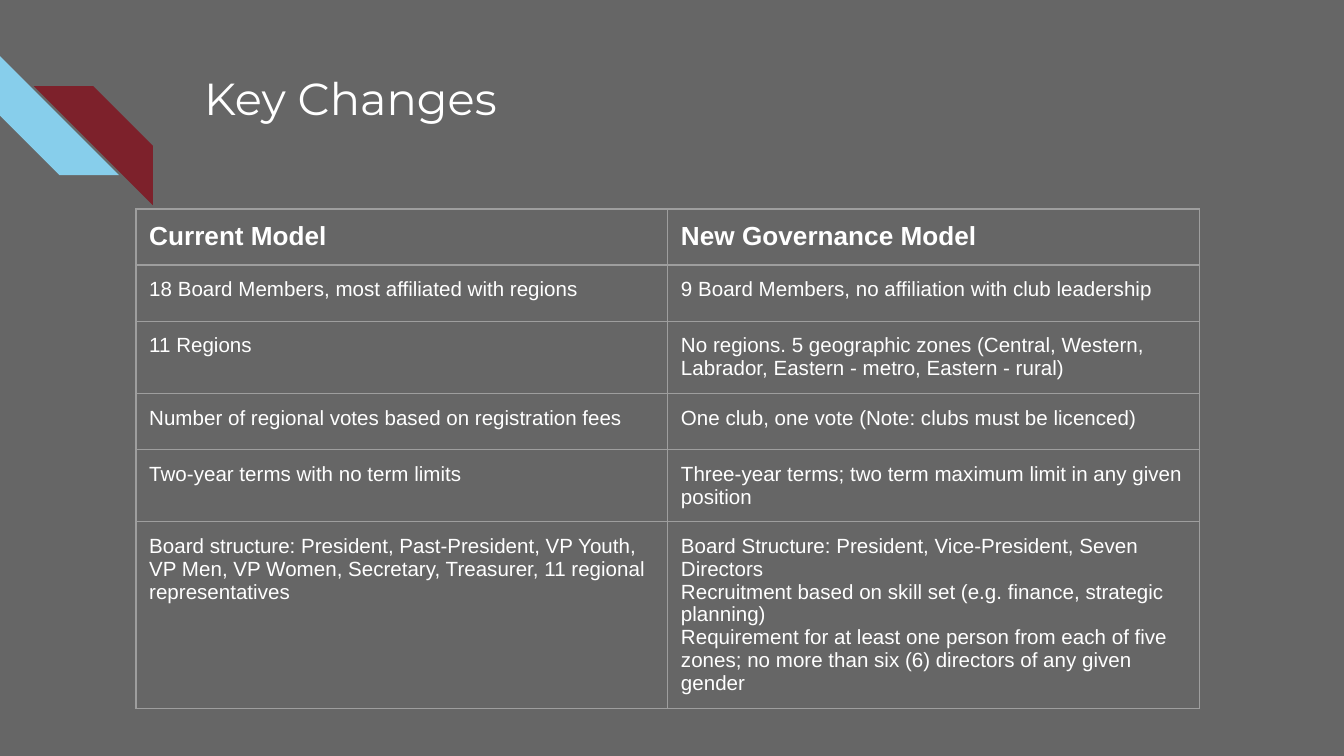
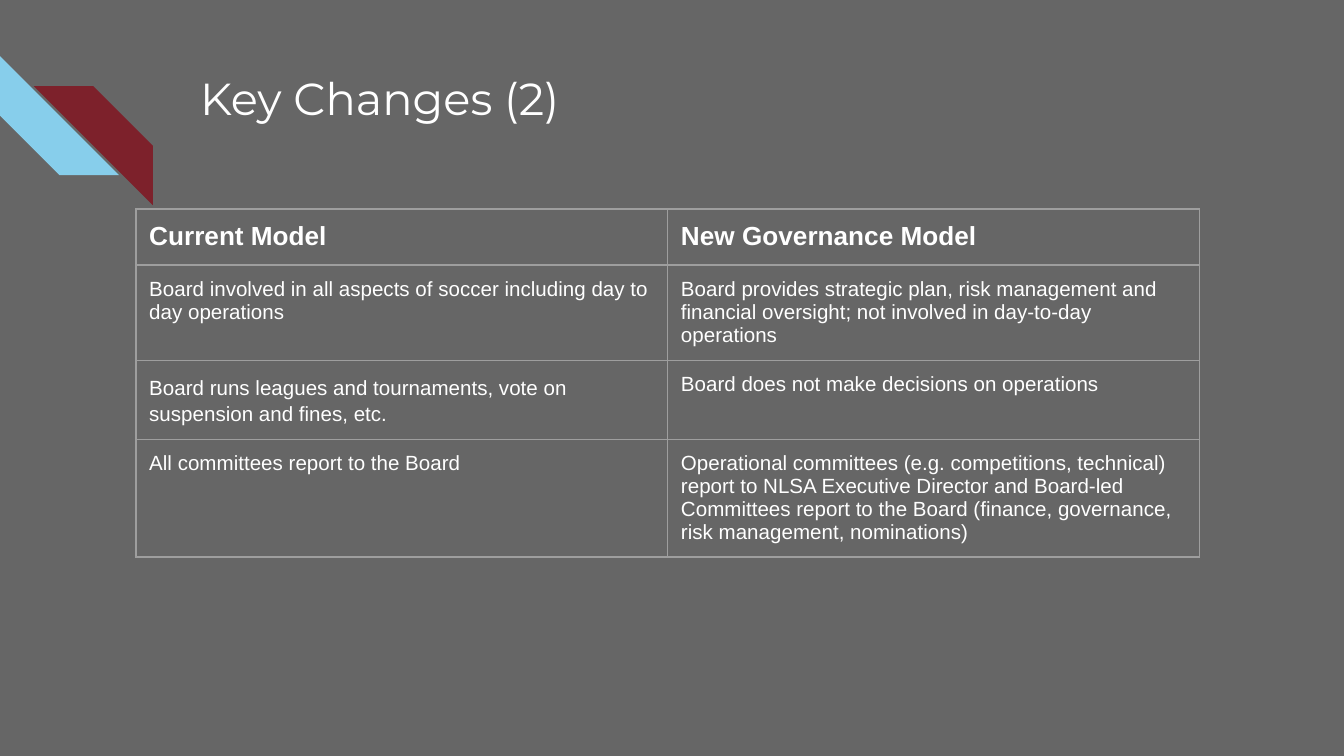
"""Build two slides that compare the current and the new governance model."""
from dataclasses import dataclass

from lxml import etree
from pptx import Presentation
from pptx import util as u
from pptx.dml.color import RGBColor
from pptx.enum import shapes, text
from pptx.oxml import ns

GREY = RGBColor(0x66, 0x66, 0x66)
WHITE = RGBColor(0xFF, 0xFF, 0xFF)
SKY = RGBColor(0x87, 0xCE, 0xEB)
WINE = RGBColor(0x7D, 0x21, 0x2B)
RULE = RGBColor(0x9E, 0x9E, 0x9E)
INSET = u.Cm(0.25)
SIDE = u.Cm(2.25)
COL = u.Cm(10.05)


@dataclass
class Stripe:
    left: float
    top: float
    fill: RGBColor
    turn: int = 0
    flip: bool = False


@dataclass
class Row:
    high: float
    now: str
    new: str
    loose: bool = False


@dataclass
class Page:
    title: str
    left: float
    rows: list[Row]


STRIPES = [
    Stripe(0, 1.06, SKY, turn=270),
    Stripe(0.64, 1.63, WINE, flip=True),
]
HEAD = Row(1.06, "Current Model", "New Governance Model")
PAGES = [
    Page("Key Changes", 3.61, [
        HEAD,
        Row(1.06, "18 Board Members, most affiliated with regions",
            "9 Board Members, no affiliation with club leadership"),
        Row(0.94, "11 Regions",
            "No regions. 5 geographic zones (Central, Western, Labrador, "
            "Eastern - metro, Eastern - rural)"),
        Row(1.06, "Number of regional votes based on registration fees",
            "One club, one vote (Note: clubs must be licenced)"),
        Row(1.22, "Two-year terms with no term limits",
            "Three-year terms; two term maximum limit in any given position"),
        Row(1.06,
            "Board structure: President, Past-President, VP Youth, VP Men, "
            "VP Women, Secretary, Treasurer, 11 regional representatives",
            "Board Structure: President, Vice-President, Seven Directors\n"
            "Recruitment based on skill set (e.g. finance, strategic planning)\n"
            "Requirement for at least one person from each of five zones; "
            "no more than six (6) directors of any given gender"),
    ]),
    Page("Key Changes (2)", 3.53, [
        HEAD,
        Row(1.06,
            "Board involved in all aspects of soccer including day to day operations",
            "Board provides strategic plan, risk management and financial "
            "oversight; not involved in day-to-day operations"),
        Row(1.06,
            "Board runs leagues and tournaments, vote on suspension and fines, etc.",
            "Board does not make decisions on operations", loose=True),
        Row(1.85, "All committees report to the Board",
            "Operational committees (e.g. competitions, technical) report to "
            "NLSA Executive Director and Board-led Committees report to the "
            "Board (finance, governance, risk management, nominations)"),
    ]),
]


def add_run(para, words: str, size: int, face: str, bold: bool = False) -> None:
    """Add one white run to a paragraph."""
    run = para.add_run()
    run.text = words
    font = run.font
    font.size, font.name, font.bold = u.Pt(size), face, bold
    font.color.rgb = WHITE


def pad(box) -> None:
    """Give a cell or a text frame equal margins on all sides."""
    box.margin_left = box.margin_right = INSET
    box.margin_top = box.margin_bottom = INSET


def draw_stripe(slide, stripe: Stripe) -> None:
    """Draw one diagonal stripe."""
    shape = slide.shapes.add_shape(
        shapes.MSO_SHAPE.DIAGONAL_STRIPE,
        u.Cm(stripe.left), u.Cm(stripe.top), SIDE, SIDE)
    shape.shadow.inherit = False
    shape.fill.solid()
    shape.fill.fore_color.rgb = stripe.fill
    shape.line.fill.background()
    shape.rotation = stripe.turn
    if stripe.flip:
        shape._element.spPr.find(ns.qn("a:xfrm")).set("flipH", "1")


def draw_title(slide, page: Page) -> None:
    """Place and fill the title placeholder."""
    title = slide.shapes.title
    title.left, title.top = u.Cm(page.left), u.Cm(1.09)
    title.width, title.height = u.Cm(19.56), u.Cm(2.54)
    frame = title.text_frame
    pad(frame)
    frame.word_wrap = True
    frame.auto_size = text.MSO_AUTO_SIZE.NONE
    frame.vertical_anchor = text.MSO_ANCHOR.TOP
    para = frame.paragraphs[0]
    para.alignment = text.PP_ALIGN.LEFT
    add_run(para, page.title, 24, "Montserrat")


def edge(cell) -> None:
    """Rule the four sides of a cell."""
    props = cell._tc.get_or_add_tcPr()
    for spot, tag in enumerate(("a:lnL", "a:lnR", "a:lnT", "a:lnB")):
        line = etree.Element(ns.qn(tag), w=str(u.Pt(0.75)))
        fill = etree.SubElement(line, ns.qn("a:solidFill"))
        etree.SubElement(fill, ns.qn("a:srgbClr"), val=str(RULE))
        props.insert(spot, line)


def fill_cell(cell, words: str, head: bool, loose: bool) -> None:
    """Format a cell and write its lines as paragraphs."""
    cell.fill.background()
    edge(cell)
    pad(cell)
    cell.vertical_anchor = text.MSO_ANCHOR.TOP
    frame = cell.text_frame
    for spot, line in enumerate(words.split("\n")):
        para = frame.add_paragraph() if spot else frame.paragraphs[0]
        if loose:
            para.line_spacing = 1.15
            para.space_after = u.Pt(12)
        add_run(para, line, 14 if head else 11, "Arial", head)


def draw_table(slide, rows: list[Row]) -> None:
    """Draw the table of both models."""
    high = sum(u.Cm(row.high) for row in rows)
    table = slide.shapes.add_table(
        len(rows), 2, u.Cm(2.57), u.Cm(3.95), 2 * COL, high).table
    table.first_row = table.horz_banding = False
    for col in table.columns:
        col.width = COL
    for spot, row in enumerate(rows):
        table.rows[spot].height = u.Cm(row.high)
        fill_cell(table.cell(spot, 0), row.now, row is HEAD, row.loose)
        fill_cell(table.cell(spot, 1), row.new, row is HEAD, False)


def main() -> None:
    """Build and save the deck."""
    deck = Presentation()
    deck.slide_width, deck.slide_height = u.Cm(25.4), u.Cm(14.29)
    back = deck.slide_master.background.fill
    back.solid()
    back.fore_color.rgb = GREY
    for page in PAGES:
        slide = deck.slides.add_slide(deck.slide_layouts.get_by_name("Title Only"))
        for stripe in STRIPES:
            draw_stripe(slide, stripe)
        draw_title(slide, page)
        draw_table(slide, page.rows)
    deck.save("out.pptx")


if __name__ == "__main__":
    main()
